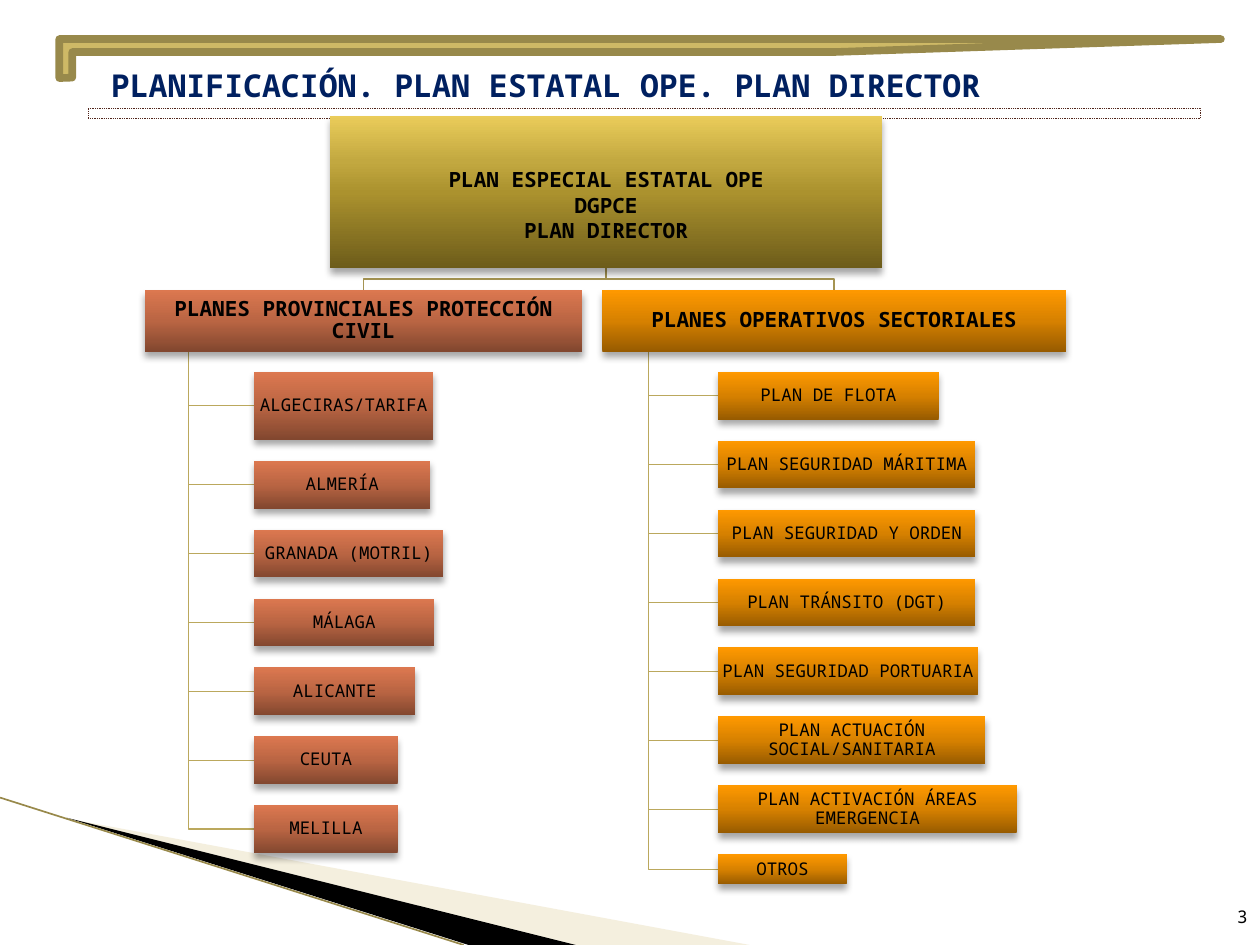
from lxml import etree
from pptx import Presentation
from pptx.dml.color import RGBColor
from pptx.enum.dml import MSO_LINE
from pptx.enum.shapes import MSO_CONNECTOR, MSO_SHAPE
from pptx.enum.text import MSO_ANCHOR, MSO_AUTO_SIZE, PP_ALIGN
from pptx.oxml.ns import qn
from pptx.util import Inches, Pt

LEFT, CENTER, RIGHT = PP_ALIGN.LEFT, PP_ALIGN.CENTER, PP_ALIGN.RIGHT
TOP, MIDDLE, BOTTOM = MSO_ANCHOR.TOP, MSO_ANCHOR.MIDDLE, MSO_ANCHOR.BOTTOM
NO_AUTOFIT = MSO_AUTO_SIZE.NONE
RECTANGLE, HALF_FRAME = MSO_SHAPE.RECTANGLE, MSO_SHAPE.HALF_FRAME
STRAIGHT = MSO_CONNECTOR.STRAIGHT
DOTTED = MSO_LINE.ROUND_DOT

FONT = "Noto Sans Mono"
BLACK = RGBColor(0x00, 0x00, 0x00)
NAVY = RGBColor(0x00, 0x20, 0x60)
CREAM = RGBColor(0xE4, 0xD7, 0xAD)
PALE_GOLD = RGBColor(0xE1, 0xD3, 0xA6)
GOLD = RGBColor(0xCE, 0xB9, 0x66)
DARK_GOLD = RGBColor(0x98, 0x89, 0x4B)
MAROON = RGBColor(0x51, 0x25, 0x1B)
ROOT_LINE = RGBColor(0xA5, 0x94, 0x52)
BRANCH_LINE = RGBColor(0xBB, 0xA8, 0x5D)

# Gradient stops from bottom to top: (percent, colour)
OLIVE_STOPS = [(0, RGBColor(0x6D, 0x5C, 0x1A)), (50, RGBColor(0xAB, 0x92, 0x2E)),
               (70, RGBColor(0xC2, 0xA8, 0x40)), (100, RGBColor(0xEA, 0xCC, 0x5A))]
BRICK_STOPS = [(0, RGBColor(0x82, 0x47, 0x2F)), (50, RGBColor(0xBA, 0x65, 0x43)),
               (100, RGBColor(0xDC, 0x78, 0x50))]
ORANGE_STOPS = [(0, RGBColor(0x97, 0x5B, 0x00)), (50, RGBColor(0xD7, 0x81, 0x00)),
                (100, RGBColor(0xFF, 0x99, 0x00))]

# Plans under each heading: (name, width, height) in inches
PROVINCES = [("ALGECIRAS/TARIFA", 1.42, 0.54), ("ALMERÍA", 1.4, 0.38),
             ("GRANADA (MOTRIL)", 1.5, 0.38), ("MÁLAGA", 1.43, 0.38),
             ("ALICANTE", 1.28, 0.38), ("CEUTA", 1.14, 0.38), ("MELILLA", 1.14, 0.38)]
SECTORS = [("PLAN DE FLOTA", 1.75, 0.38), ("PLAN SEGURIDAD MÁRITIMA", 2.04, 0.38),
           ("PLAN SEGURIDAD Y ORDEN", 2.04, 0.38), ("PLAN TRÁNSITO (DGT)", 2.04, 0.38),
           ("PLAN SEGURIDAD PORTUARIA", 2.06, 0.38),
           ("PLAN ACTUACIÓN SOCIAL/SANITARIA", 2.12, 0.38),
           ("PLAN ACTIVACIÓN ÁREAS EMERGENCIA", 2.37, 0.38), ("OTROS", 1.02, 0.24)]


def box_of(*lengths):
    return [Inches(length) for length in lengths]


def add_xml(parent, tag, **attributes):
    return etree.SubElement(parent, qn(tag), {k: str(v) for k, v in attributes.items()})


def format_text(frame, size, color, alignment, bold=False, spacing=None):
    for paragraph in frame.paragraphs:
        paragraph.alignment = alignment
        paragraph.line_spacing = spacing
        for run in paragraph.runs:
            run.font.name, run.font.size, run.font.bold = FONT, Pt(size), bold
            run.font.color.rgb = color


def add_outline(slide, points, closed=False):
    builder = slide.shapes.build_freeform(*points[0])
    builder.add_line_segments(points[1:], close=closed)
    shape = builder.convert_to_shape()
    shape.shadow.inherit = False
    return shape


def add_elbow(slide, points, color):
    elbow = add_outline(slide, points)
    elbow.fill.background()
    elbow.line.color.rgb = color
    elbow.line.width = Pt(0.75)


def add_wedge(slide, points, color):
    wedge = add_outline(slide, [box_of(*point) for point in points], closed=True)
    wedge.fill.solid()
    wedge.fill.fore_color.rgb = color
    wedge.line.fill.background()
    return wedge


def add_plan(slide, box, text, stops, size, bold=False, spacing=0.9):
    """Add a gradient box with a soft shadow and centred text."""
    plan = slide.shapes.add_shape(RECTANGLE, *box)
    plan.line.fill.background()
    plan.fill.gradient()
    plan.fill.gradient_angle = 90
    properties = plan._element.spPr
    stop_list = properties.find(".//" + qn("a:gsLst"))
    for old_stop in list(stop_list):
        stop_list.remove(old_stop)
    for percent, color in stops:
        add_xml(add_xml(stop_list, "a:gs", pos=percent * 1000), "a:srgbClr", val=color)

    plan.shadow.inherit = False
    shadow = add_xml(properties.find(qn("a:effectLst")), "a:outerShdw", blurRad=Pt(4),
                     dist=Pt(3), dir=5400000, rotWithShape=0)
    add_xml(add_xml(shadow, "a:srgbClr", val=BLACK), "a:alpha", val=35000)

    frame = plan.text_frame
    frame.word_wrap = True
    frame.vertical_anchor = MIDDLE
    frame.margin_left = frame.margin_right = Inches(0.01)
    frame.margin_top = frame.margin_bottom = Inches(0.01)
    frame.text = text
    format_text(frame, size, BLACK, CENTER, bold, spacing)
    return plan


def add_corner_sweep(slide):
    veil = add_wedge(slide, [(0.55, 6.5), (5.95, 7.5), (4.56, 7.5)], CREAM)
    add_xml(veil._element.spPr.find(".//" + qn("a:srgbClr")), "a:alpha", val=40000)
    add_wedge(slide, [(0.53, 6.49), (4.57, 7.5), (3.72, 7.5)], BLACK)
    edge = slide.shapes.add_connector(STRAIGHT, *box_of(0, 6.33, 3.68, 7.5))
    edge.line.color.rgb = DARK_GOLD
    edge.line.width = Pt(0.95)
    add_xml(edge._element.spPr, "a:effectLst")


def add_header(slide, box):
    left, top, width, height = box
    bracket = slide.shapes.add_shape(HALF_FRAME, left, top, width, Inches(0.31))
    bracket.fill.solid()
    bracket.fill.fore_color.rgb = GOLD
    bracket.line.color.rgb = DARK_GOLD
    bracket.line.width = Pt(4.33)
    add_xml(bracket.line._get_or_add_ln(), "a:round")

    rule_height = Inches(0.08)
    rule = slide.shapes.add_shape(RECTANGLE, left + Inches(0.23), top + height - rule_height,
                                  Inches(8.83), rule_height)
    rule.fill.background()
    rule.line.color.rgb = MAROON
    rule.line.width = Pt(0.5)
    rule.line.dash_style = DOTTED
    bracket.shadow.inherit = rule.shadow.inherit = False

    title = slide.shapes.title
    title.left, title.top = left + Inches(0.31), top + Inches(0.16)
    title.width, title.height = box_of(7.92, 0.4)
    frame = title.text_frame
    frame.text = "PLANIFICACIÓN. PLAN ESTATAL OPE. PLAN DIRECTOR"
    frame.auto_size = NO_AUTOFIT
    frame.vertical_anchor = TOP
    format_text(frame, 18, NAVY, LEFT, bold=True)


def add_page_number(slide, box):
    frame = slide.shapes.add_textbox(*box).text_frame
    frame.text = "3"
    frame.word_wrap = True
    frame.vertical_anchor = BOTTOM
    format_text(frame, 10, BLACK, RIGHT)


def add_root(slide, box, heading_boxes):
    left, top, width, height = box
    center, bottom = left + width // 2, top + height
    for head_left, head_top, head_width, _ in heading_boxes:
        head_center, bend = head_left + head_width // 2, (bottom + head_top) // 2
        add_elbow(slide, [(center, bottom), (center, bend), (head_center, bend),
                          (head_center, head_top)], ROOT_LINE)
    root = add_plan(slide, box, "PLAN ESPECIAL ESTATAL OPE\nDGPCE\nPLAN DIRECTOR",
                    OLIVE_STOPS, 12, bold=True, spacing=None)
    root.text_frame.margin_top = Inches(0.21)


def add_branch(slide, box, bottom, heading, plans, stops):
    """Add a heading and, evenly spaced down to bottom, the plans hanging from it."""
    left, top, width, height = box
    trunk, plan_left = left + width // 10, left + width // 4
    plan_top = top + height + Inches(0.16)
    heights = [Inches(plan_height) for _, _, plan_height in plans]
    gap = (bottom - plan_top - sum(heights)) // (len(plans) - 1)
    for (name, plan_width, _), plan_height in zip(plans, heights):
        middle = plan_top + plan_height // 2
        add_elbow(slide, [(trunk, top + height), (trunk, middle), (plan_left, middle)],
                  BRANCH_LINE)
        add_plan(slide, (plan_left, plan_top, Inches(plan_width), plan_height), name, stops, 10)
        plan_top += plan_height + gap
    add_plan(slide, box, heading, stops, 12, bold=True)


def main():
    deck = Presentation()
    deck.slide_width, deck.slide_height = box_of(10, 7.5)
    slide = deck.slides.add_slide(deck.slide_layouts[5])
    add_corner_sweep(slide)
    add_header(slide, box_of(0.47, 0.31, 9.22, 0.63))
    add_page_number(slide, box_of(9.6, 7.01, 0.4, 0.4))

    provinces_box = box_of(1.15, 2.3, 3.47, 0.49)
    sectors_box = box_of(4.78, 2.3, 3.68, 0.49)
    add_root(slide, box_of(2.62, 0.92, 4.38, 1.21), [provinces_box, sectors_box])
    add_branch(slide, provinces_box, Inches(6.77), "PLANES PROVINCIALES PROTECCIÓN CIVIL",
               PROVINCES, BRICK_STOPS)
    add_branch(slide, sectors_box, Inches(7.02), "PLANES OPERATIVOS SECTORIALES",
               SECTORS, ORANGE_STOPS)
    deck.save("out.pptx")


if __name__ == "__main__":
    main()
